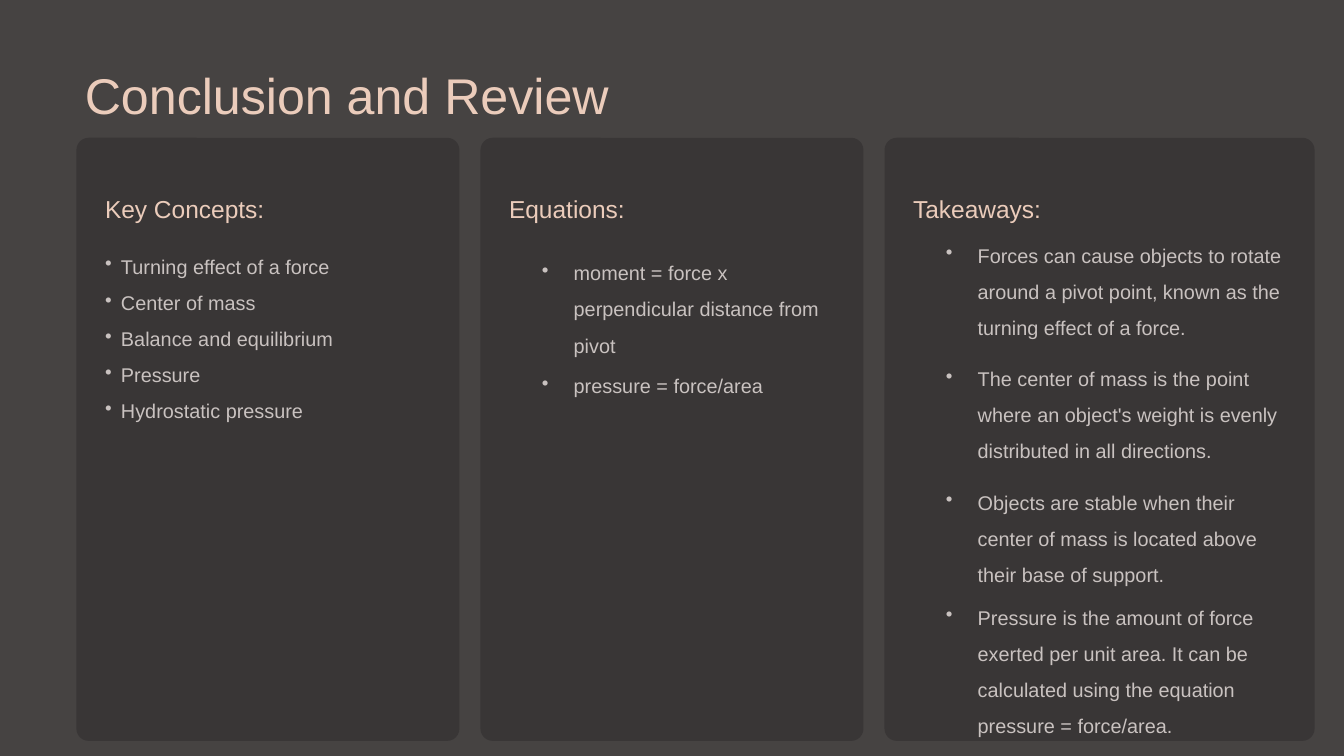
from dataclasses import dataclass

from lxml.etree import SubElement
from pptx import Presentation
from pptx.dml.color import RGBColor as Rgb
from pptx.enum.shapes import MSO_SHAPE as Preset
from pptx.enum.text import MSO_ANCHOR as Anchor, MSO_AUTO_SIZE as AutoSize, PP_ALIGN as Align
from pptx.oxml.ns import qn
from pptx.util import Inches, Pt


@dataclass(frozen=True)
class TextStyle:
    size: int
    leading: int
    color: str


@dataclass(frozen=True)
class Theme:
    font: str = "Arial"
    background: str = "464342"
    card: str = "393636"
    title: TextStyle = TextStyle(43, 56, "EBCCBB")
    heading: TextStyle = TextStyle(21, 28, "EBCCBB")
    body: TextStyle = TextStyle(17, 31, "C9C2C0")


@dataclass(frozen=True)
class Card:
    heading: str
    width: float
    body_offset: float
    body_width: float
    hanging: float
    groups: tuple


THEME = Theme()
GRID_LEFT, COLUMN_PITCH = 0.91, 4.81
CARD_TOP, CARD_HEIGHT, CORNER = 1.64, 7.18, 0.146
HEADING_TOP, HEADING_OFFSET = 2.22, 0.29

CARDS = (
    Card("Key Concepts:", 4.56, 0.29, 3.98, 0.19, (
        (2.83, 2.22, ("Turning effect of a force", "Center of mass",
                      "Balance and equilibrium", "Pressure", "Hydrostatic pressure")),
    )),
    Card("Equations:", 4.56, 0.68, 3.59, 0.38, (
        (2.91, 1.36, ("moment = force x perpendicular distance from pivot",)),
        (4.25, 0.5, ("pressure = force/area",)),
    )),
    Card("Takeaways:", 5.12, 0.68, 4.24, 0.38, (
        (2.7, 1.36, ("Forces can cause objects to rotate around a pivot point, "
                     "known as the turning effect of a force.",)),
        (4.17, 1.36, ("The center of mass is the point where an object's weight "
                      "is evenly distributed in all directions.",)),
        (5.64, 1.36, ("Objects are stable when their center of mass is located "
                      "above their base of support.",)),
        (7.01, 1.79, ("Pressure is the amount of force exerted per unit area. It can be "
                      "calculated using the equation pressure = force/area.",)),
    )),
)


def write_text(frame, lines, style):
    frame.word_wrap = True
    frame.auto_size = AutoSize.NONE
    frame.vertical_anchor = Anchor.TOP
    frame.margin_left = frame.margin_right = Inches(0.05)
    frame.margin_top = frame.margin_bottom = Inches(0.05)
    frame.text = "\n".join(lines)
    for paragraph in frame.paragraphs:
        paragraph.alignment = Align.LEFT
        paragraph.line_spacing = Pt(style.leading)
        paragraph.font.name = THEME.font
        paragraph.font.size = Pt(style.size)
        paragraph.font.color.rgb = Rgb.from_string(style.color)


def add_text(slide, left, top, width, height, lines, style):
    box = slide.shapes.add_textbox(*map(Inches, (left, top, width, height)))
    write_text(box.text_frame, lines, style)
    return box.text_frame


def add_bullets(slide, left, top, width, height, lines, hanging):
    frame = add_text(slide, left, top, width, height, lines, THEME.body)
    for paragraph in frame.paragraphs:
        properties = paragraph._p.get_or_add_pPr()
        properties.set("marL", str(Inches(hanging)))
        properties.set("indent", str(-Inches(hanging)))
        bullet = SubElement(properties, qn("a:buChar"))
        bullet.set("char", "•")
        properties.insert_element_before(bullet, "a:tabLst", "a:defRPr", "a:extLst")


def add_title(slide, wording):
    title = slide.shapes.title
    title.left, title.top, title.width, title.height = map(Inches, (0.96, 0.66, 6.6, 0.86))
    write_text(title.text_frame, [wording], THEME.title)


def add_card(slide, column, card):
    left = GRID_LEFT + column * COLUMN_PITCH
    panel = slide.shapes.add_shape(
        Preset.ROUNDED_RECTANGLE, *map(Inches, (left, CARD_TOP, card.width, CARD_HEIGHT)))
    panel.adjustments[0] = CORNER / card.width
    panel.fill.solid()
    panel.fill.fore_color.rgb = Rgb.from_string(THEME.card)
    panel.line.fill.background()
    panel.shadow.inherit = False
    add_text(slide, left + HEADING_OFFSET, HEADING_TOP, card.body_width, 0.48,
             [card.heading], THEME.heading)
    for top, height, lines in card.groups:
        add_bullets(slide, left + card.body_offset, top, card.body_width, height,
                    lines, card.hanging)


def main():
    deck = Presentation()
    deck.slide_width, deck.slide_height = Inches(16), Inches(9)
    slide = deck.slides.add_slide(deck.slide_layouts[5])
    slide.background.fill.solid()
    slide.background.fill.fore_color.rgb = Rgb.from_string(THEME.background)
    add_title(slide, "Conclusion and Review")
    for column, card in enumerate(CARDS):
        add_card(slide, column, card)
    deck.save("out.pptx")


if __name__ == "__main__":
    main()
